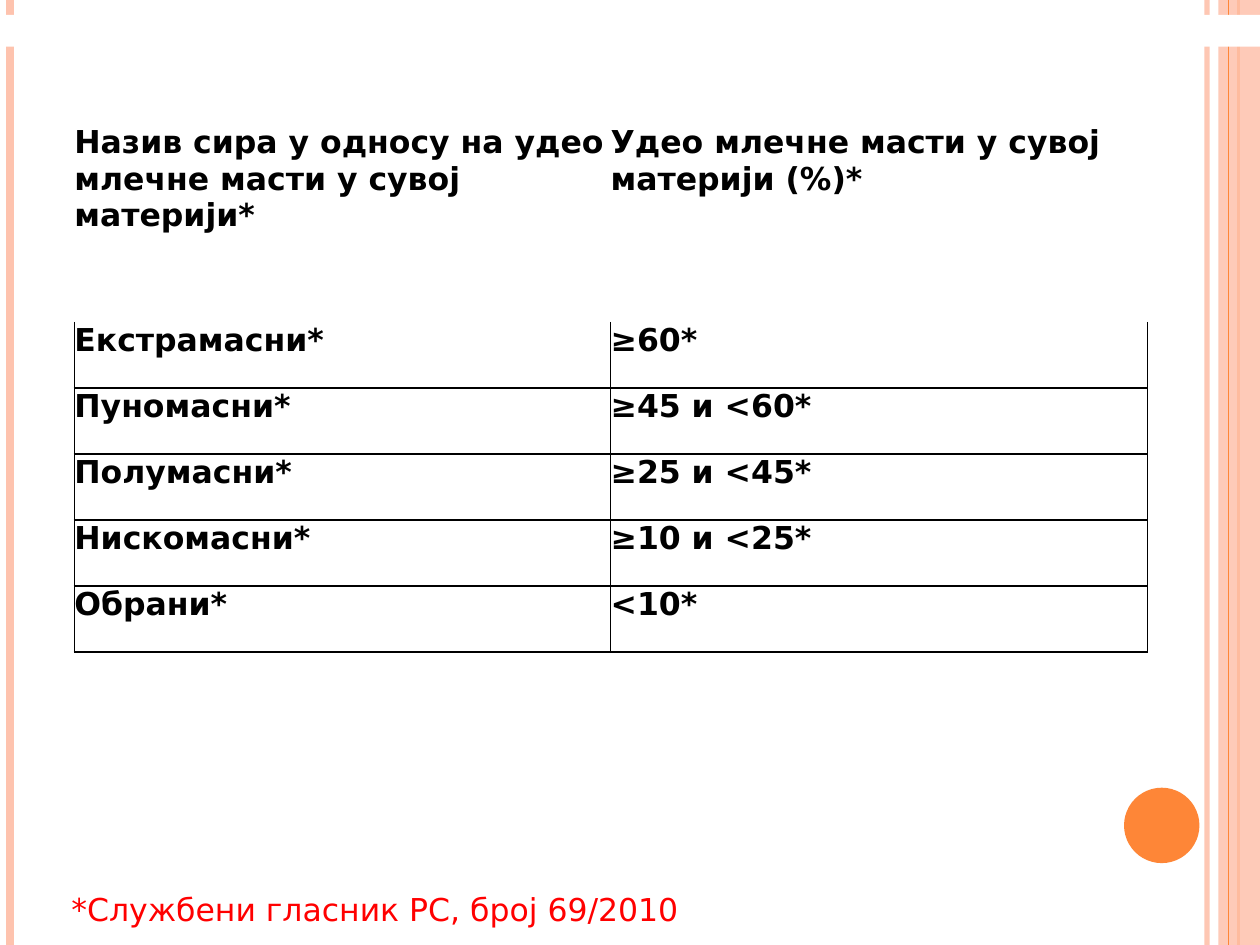
from lxml import etree
from pptx import Presentation
from pptx.dml.color import RGBColor
from pptx.enum.shapes import MSO_CONNECTOR, MSO_SHAPE
from pptx.oxml.ns import qn
from pptx.util import Cm, Pt

LINE = MSO_CONNECTOR.STRAIGHT
RECT = MSO_SHAPE.RECTANGLE
OVAL = MSO_SHAPE.OVAL
FONT = "DejaVu Sans"
HEX = {"pale": "FEC3AE", "orange": "FE8637", "white": "FFFFFF",
       "black": "000000", "red": "FF0000"}
RGB = {name: RGBColor.from_string(code) for name, code in HEX.items()}

deck = Presentation()
deck.slide_width, deck.slide_height = Cm(25.4), Cm(19.05)
slide = deck.slides.add_slide(deck.slide_layouts[6])
shapes = slide.shapes


def block(kind, left, top, width, height, color):
    shape = shapes.add_shape(kind, Cm(left), Cm(top), Cm(width), Cm(height))
    shape.shadow.inherit = False
    shape.fill.solid()
    shape.fill.fore_color.rgb = RGB[color]
    shape.line.fill.background()
    return shape


def fade(fill, percent):
    color = fill._xPr.find(".//" + qn("a:srgbClr"))
    etree.SubElement(color, qn("a:alpha"), val=str(percent * 1000))


# Side stripes, with the wide band between the lines
for x, color, weight, alpha in [(24.33, "pale", 3, 93), (0.2, "pale", 4.5, 100),
                                (24.97, "orange", 1.5, 100), (24.77, "orange", 0.75, 100)]:
    if x == 24.77:
        band = block(RECT, 24.56, 0, 0.84, 19.05, "pale")
        fade(band.fill, 87)
    rule = shapes.add_connector(LINE, Cm(x), 0, Cm(x), deck.slide_height)
    rule.line.color.rgb = RGB[color]
    rule.line.width = Pt(weight)
    etree.SubElement(rule._element.spPr, qn("a:effectLst"))
    if alpha < 100:
        fade(rule.line.fill, alpha)

block(OVAL, 22.66, 15.88, 1.52, 1.52, "orange")

# Table of cheese types
ROWS = [
    ("Назив сира у односу на удео млечне масти у сувој материји*",
     "Удео млечне масти у сувој материји (%)*"),
    ("Екстрамасни*", "≥60*"),
    ("Пуномасни*", "≥45 и <60*"),
    ("Полумасни*", "≥25 и <45*"),
    ("Нискомасни*", "≥10 и <25*"),
    ("Обрани*", "<10*"),
]
frame = shapes.add_table(len(ROWS), 2, Cm(1.5), Cm(2.51), Cm(21.63), Cm(10.63))
table = frame.table
table.first_row = table.horz_banding = False
table.columns[0].width, table.columns[1].width = Cm(10.81), Cm(10.82)

for i, texts in enumerate(ROWS):
    table.rows[i].height = Cm(1.33 if i else 3.98)
    # The header is open; the first body row has no top edge
    edges = "" if i == 0 else "LRB" if i == 1 else "LRTB"
    for j, text in enumerate(texts):
        cell = table.cell(i, j)
        cell.margin_left = cell.margin_right = cell.margin_top = cell.margin_bottom = 0
        cell.text_frame.text = text
        font = cell.text_frame.paragraphs[0].runs[0].font
        font.name, font.size, font.bold = FONT, Pt(18), True
        font.color.rgb = RGB["black"]
        props = cell._tc.get_or_add_tcPr()
        for side in "LRTB":
            edge = etree.SubElement(props, qn("a:ln" + side), w=str(Pt(1)))
            if side in edges:
                paint = etree.SubElement(edge, qn("a:solidFill"))
                etree.SubElement(paint, qn("a:srgbClr"), val=HEX["black"])
            else:
                etree.SubElement(edge, qn("a:noFill"))
        cell.fill.background()

# White strip across the top
block(RECT, 0, 0.3, 26.49, 0.64, "white")

# Source note
note = shapes.add_textbox(Cm(1.19), Cm(17.81), Cm(13.26), Cm(1.02)).text_frame
note.word_wrap = True
note.text = "*Службени гласник РС, број 69/2010"
font = note.paragraphs[0].runs[0].font
font.name, font.size = FONT, Pt(18)
font.color.rgb = RGB["red"]

deck.save("out.pptx")
